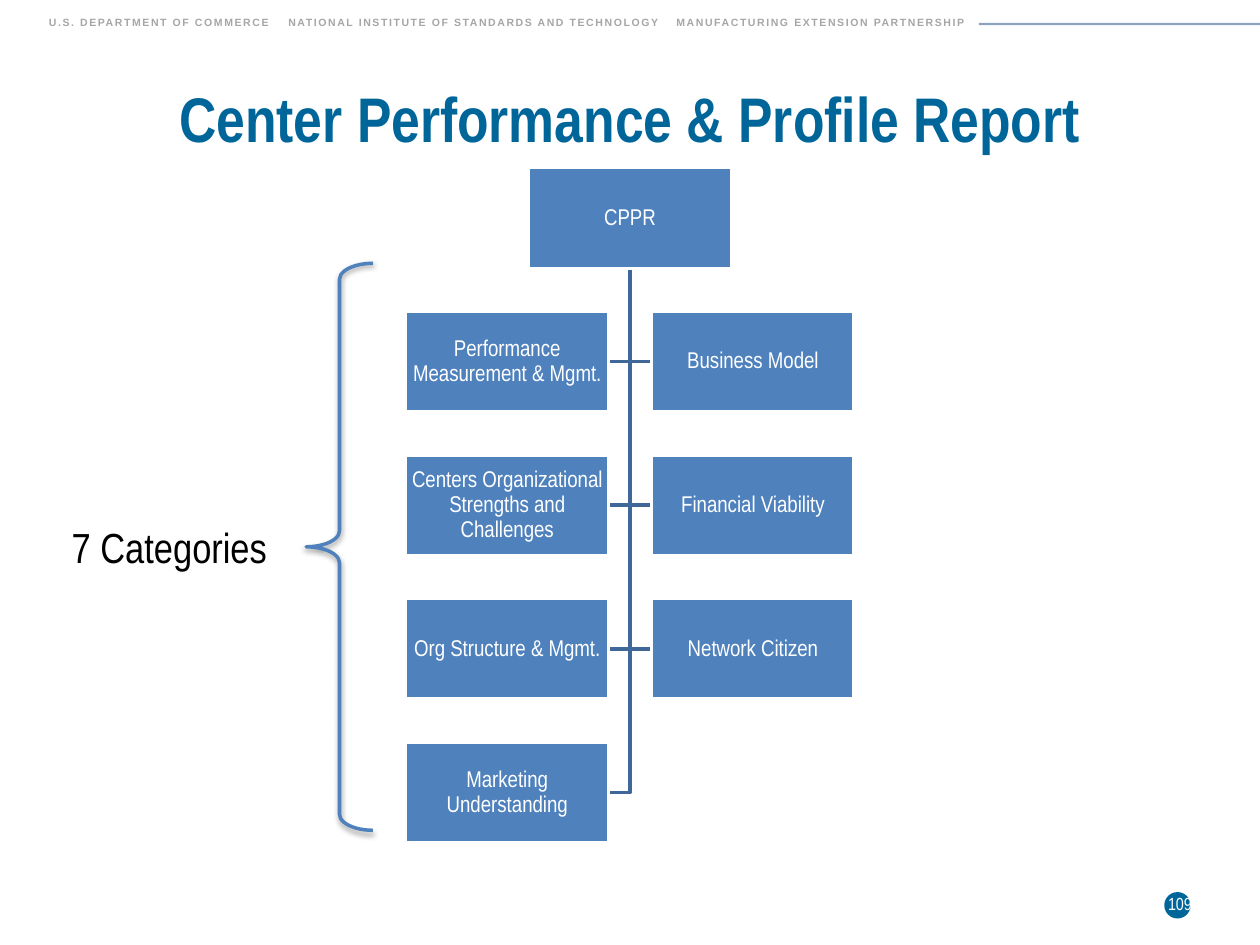
from lxml.etree import SubElement as Sub
from pptx import Presentation
from pptx.dml.color import RGBColor as RGB
from pptx.enum.shapes import MSO_CONNECTOR as CON, MSO_SHAPE as SHAPE
from pptx.enum.text import MSO_ANCHOR as ANCHOR, PP_ALIGN as ALIGN
from pptx.oxml.ns import qn
from pptx.util import Inches, Pt


def color(fmt, code):
    """Give a fill, line fill or font a colour from a hex string."""
    if hasattr(fmt, "solid"):
        fmt.solid()
        fmt.fore_color.rgb = RGB.from_string(code)
    else:
        fmt.color.rgb = RGB.from_string(code)


def write(shape, text, size, code, face="Arial Narrow", bold=False,
          align=ALIGN.CENTER, anchor=ANCHOR.MIDDLE, inset=None, wrap=True):
    """Put one formatted paragraph in a shape and return its run."""
    frame = shape.text_frame
    look = {"word_wrap": wrap, "vertical_anchor": anchor}
    if inset is not None:
        for side in ("left", "top", "right", "bottom"):
            look["margin_" + side] = Inches(inset)
    for key, val in look.items():
        setattr(frame, key, val)
    para = frame.paragraphs[0]
    para.alignment = align
    run = para.add_run()
    run.text = text
    for key, val in {"name": face, "size": Pt(size), "bold": bold}.items():
        setattr(run.font, key, val)
    color(run.font, code)
    return run


NAVY, BLUE, DARK, WHITE = "006699", "4F81BD", "3F6797", "FFFFFF"

deck = Presentation()
deck.slide_width, deck.slide_height = Inches(10), Inches(7.5)
slide = deck.slides.add_slide(deck.slide_layouts[6])
shapes = slide.shapes

# Header line and agency names
rule = shapes.add_connector(CON.STRAIGHT, Inches(7.77), Inches(0.19),
                            Inches(10), Inches(0.19))
rule.line.width = Pt(1.25)
color(rule.line.fill, "1F497D")
tint = next(rule.line._get_or_add_ln().iter(qn("a:srgbClr")))
Sub(tint, qn("a:alpha"), val="50000")
Sub(rule._element.spPr, qn("a:effectLst"))

head = shapes.add_textbox(Inches(0.29), Inches(0.08), Inches(7.9), Inches(0.2))
props = head.text_frame.paragraphs[0]._p.get_or_add_pPr()
tabs = Sub(props, qn("a:tabLst"))
for stop in (1.9, 4.98):
    Sub(tabs, qn("a:tab"), pos=str(Inches(stop)), algn="l")
names = ("U.S. DEPARTMENT OF COMMERCE",
         "NATIONAL INSTITUTE OF STANDARDS AND TECHNOLOGY",
         "MANUFACTURING EXTENSION PARTNERSHIP")
run = write(head, "\t".join(names), 6, "A6A6A6", "Arial", True,
            ALIGN.LEFT, ANCHOR.TOP)
run._r.get_or_add_rPr().set("spc", "90")

title = shapes.add_textbox(Inches(0.5), Inches(0.55), Inches(9), Inches(0.77))
write(title, "Center Performance & Profile Report", 36, NAVY, bold=True)

# Chart of the report and its categories
WIDE, HIGH, TOP, STEP, MID = 1.61, 0.8, 1.33, 1.14, 5
LEFT, RIGHT = 3.22, 5.17
nodes = [
    ("CPPR", MID - WIDE / 2, 0),
    ("Performance Measurement & Mgmt.", LEFT, 1),
    ("Business Model", RIGHT, 1),
    ("Centers Organizational Strengths and Challenges", LEFT, 2),
    ("Financial Viability", RIGHT, 2),
    ("Org Structure & Mgmt.", LEFT, 3),
    ("Network Citizen", RIGHT, 3),
    ("Marketing Understanding", LEFT, 4),
]

for text, left, row in reversed(nodes[1:]):
    edge = left + WIDE if left < MID else left
    turn = Inches(TOP + row * STEP + HIGH / 2)
    path = shapes.build_freeform(Inches(MID), Inches(TOP + HIGH))
    path.add_line_segments([(Inches(MID), turn), (Inches(edge), turn)],
                           close=False)
    elbow = path.convert_to_shape()
    elbow.shadow.inherit = False
    elbow.fill.background()
    elbow.line.width = Pt(2)
    color(elbow.line.fill, DARK)

for text, left, row in nodes:
    box = shapes.add_shape(SHAPE.RECTANGLE, Inches(left),
                           Inches(TOP + row * STEP), Inches(WIDE), Inches(HIGH))
    box.shadow.inherit = False
    color(box.fill, BLUE)
    box.line.width = Pt(2)
    color(box.line.fill, WHITE)
    write(box, text, 13, WHITE, inset=0.01)
    box.text_frame.paragraphs[0].line_spacing = 0.9

# Page number
dot = shapes.add_shape(SHAPE.OVAL, Inches(9.24), Inches(7.08),
                       Inches(0.21), Inches(0.21))
dot.shadow.inherit = False
color(dot.fill, NAVY)
dot.line.fill.background()
page = shapes.add_textbox(Inches(9.11), Inches(7.04), Inches(0.51), Inches(0.4))
write(page, "109", 10, WHITE, anchor=ANCHOR.TOP)

# Brace with a soft shadow, and its label
brace = shapes.add_shape(SHAPE.LEFT_BRACE, Inches(2.43), Inches(2.09),
                         Inches(0.53), Inches(4.5))
brace.adjustments[0] = 0.24
brace.fill.background()
brace.line.width = Pt(2)
color(brace.line.fill, BLUE)
brace.shadow.inherit = False
glow = Sub(brace._element.spPr.find(qn("a:effectLst")), qn("a:outerShdw"),
           blurRad=str(Pt(3.1)), dist=str(Pt(1.6)), dir="5400000",
           rotWithShape="0")
Sub(Sub(glow, qn("a:srgbClr"), val="000000"), qn("a:alpha"), val="38000")

label = shapes.add_textbox(Inches(0.47), Inches(4.09), Inches(1.78), Inches(0.5))
write(label, "7 Categories", 24, "000000", align=ALIGN.LEFT,
      anchor=ANCHOR.TOP, wrap=False)

deck.save("out.pptx")
